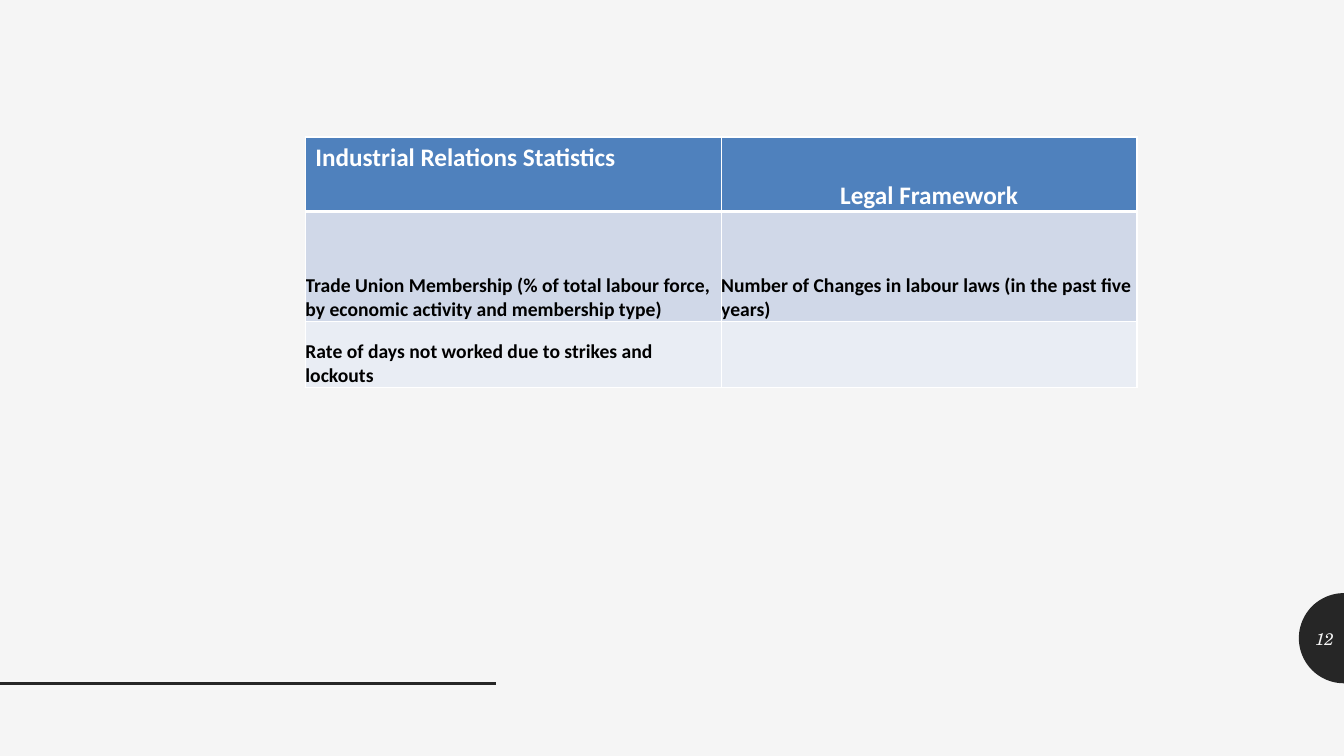
from math import cos, pi, sin

from lxml.etree import SubElement
from pptx import Presentation
from pptx.dml.color import RGBColor
from pptx.enum.shapes import MSO_CONNECTOR
from pptx.enum.text import MSO_ANCHOR as Anchor, PP_ALIGN as Align
from pptx.oxml.ns import qn
from pptx.util import Pt

# Content
ROWS = [
    ("Industrial Relations Statistics", "Legal Framework"),
    ("Trade Union Membership (% of total labour force, by economic activity and membership type)",
     "Number of Changes in labour laws (in the past five years)"),
    ("Rate of days not worked due to strikes and lockouts", ""),
]
SLIDE_NUMBER = "12"

# Colours and fonts
PAPER = RGBColor(0xF5, 0xF5, 0xF5)
INK = RGBColor(0x26, 0x26, 0x26)
WHITE = RGBColor(0xFF, 0xFF, 0xFF)
BLACK = RGBColor(0x00, 0x00, 0x00)
ROW_FILLS = [RGBColor(0x4F, 0x81, 0xBD), RGBColor(0xD0, 0xD8, 0xE8), RGBColor(0xE9, 0xED, 0xF4)]
TABLE_FONT, NUMBER_FONT = "Calibri", "TeX Gyre Schola"

# Layout, in points
WIDTH, HEIGHT = 960, 540
TABLE_LEFT, TABLE_TOP, COLUMN_WIDTH = 218.16, 97.9, 297
ROW_HEIGHTS = [53.2, 78.5, 47.5]
RADIUS, CENTRE_Y = 32.2, 455.9
RULE_Y, RULE_LENGTH = 488.2, 354.2
ARC_STEPS = 48


def set_borders(cell, widths):
    properties = cell._tc.get_or_add_tcPr()
    for position, (side, width) in enumerate(widths.items()):
        line = SubElement(properties, qn(f"a:{side}"), w=str(Pt(width)))
        fill = SubElement(line, qn("a:solidFill"))
        SubElement(fill, qn("a:srgbClr"), val=str(WHITE))
        properties.insert(position, line)


presentation = Presentation()
presentation.slide_width, presentation.slide_height = Pt(WIDTH), Pt(HEIGHT)
slide = presentation.slides.add_slide(presentation.slide_layouts[6])
slide.background.fill.solid()
slide.background.fill.fore_color.rgb = PAPER
shapes = slide.shapes

# Half disc on the right edge
angles = [pi * step / ARC_STEPS for step in range(ARC_STEPS + 1)]
arc = [(Pt(WIDTH - RADIUS * sin(a)), Pt(CENTRE_Y - RADIUS * cos(a))) for a in angles]
builder = shapes.build_freeform(*arc[0])
builder.add_line_segments(arc[1:], close=True)
half_disc = builder.convert_to_shape()
half_disc.shadow.inherit = False
half_disc.fill.solid()
half_disc.fill.fore_color.rgb = INK
half_disc.line.fill.background()

# Rule at the bottom left
rule = shapes.add_connector(MSO_CONNECTOR.STRAIGHT, 0, Pt(RULE_Y), Pt(RULE_LENGTH), Pt(RULE_Y))
rule.line.color.rgb = INK
rule.line.width = Pt(2)
SubElement(rule._element.spPr, qn("a:effectLst"))

# Slide number
number_box = shapes.add_textbox(Pt(WIDTH - RADIUS), Pt(441.4), Pt(RADIUS), Pt(29))
number_frame = number_box.text_frame
number_frame.word_wrap = True
number_frame.vertical_anchor = Anchor.MIDDLE
paragraph = number_frame.paragraphs[0]
paragraph.text = SLIDE_NUMBER
paragraph.alignment = Align.RIGHT
paragraph.font.name, paragraph.font.size = NUMBER_FONT, Pt(12)
paragraph.font.italic = True
paragraph.font.color.rgb = PAPER

# Table
columns = len(ROWS[0])
table = shapes.add_table(len(ROWS), columns, Pt(TABLE_LEFT), Pt(TABLE_TOP),
                         Pt(COLUMN_WIDTH * columns), Pt(sum(ROW_HEIGHTS))).table
for column in table.columns:
    column.width = Pt(COLUMN_WIDTH)
for row_index, texts in enumerate(ROWS):
    table.rows[row_index].height = Pt(ROW_HEIGHTS[row_index])
    is_header = row_index == 0
    for column_index, text in enumerate(texts):
        cell = table.cell(row_index, column_index)
        cell.fill.solid()
        cell.fill.fore_color.rgb = ROW_FILLS[row_index]
        set_borders(cell, {"lnL": 1, "lnR": 1, "lnT": 3 if row_index == 1 else 1,
                           "lnB": 3 if is_header else 1})
        # The first heading keeps the default margins and top anchor
        if (row_index, column_index) != (0, 0):
            cell.margin_left = cell.margin_right = cell.margin_top = cell.margin_bottom = 0
            cell.vertical_anchor = Anchor.BOTTOM
        paragraph = cell.text_frame.paragraphs[0]
        paragraph.text = text
        paragraph.alignment = Align.CENTER if is_header and column_index else Align.LEFT
        paragraph.font.name, paragraph.font.size = TABLE_FONT, Pt(18 if is_header else 14)
        paragraph.font.bold = True
        paragraph.font.color.rgb = WHITE if is_header else BLACK

presentation.save("out.pptx")
